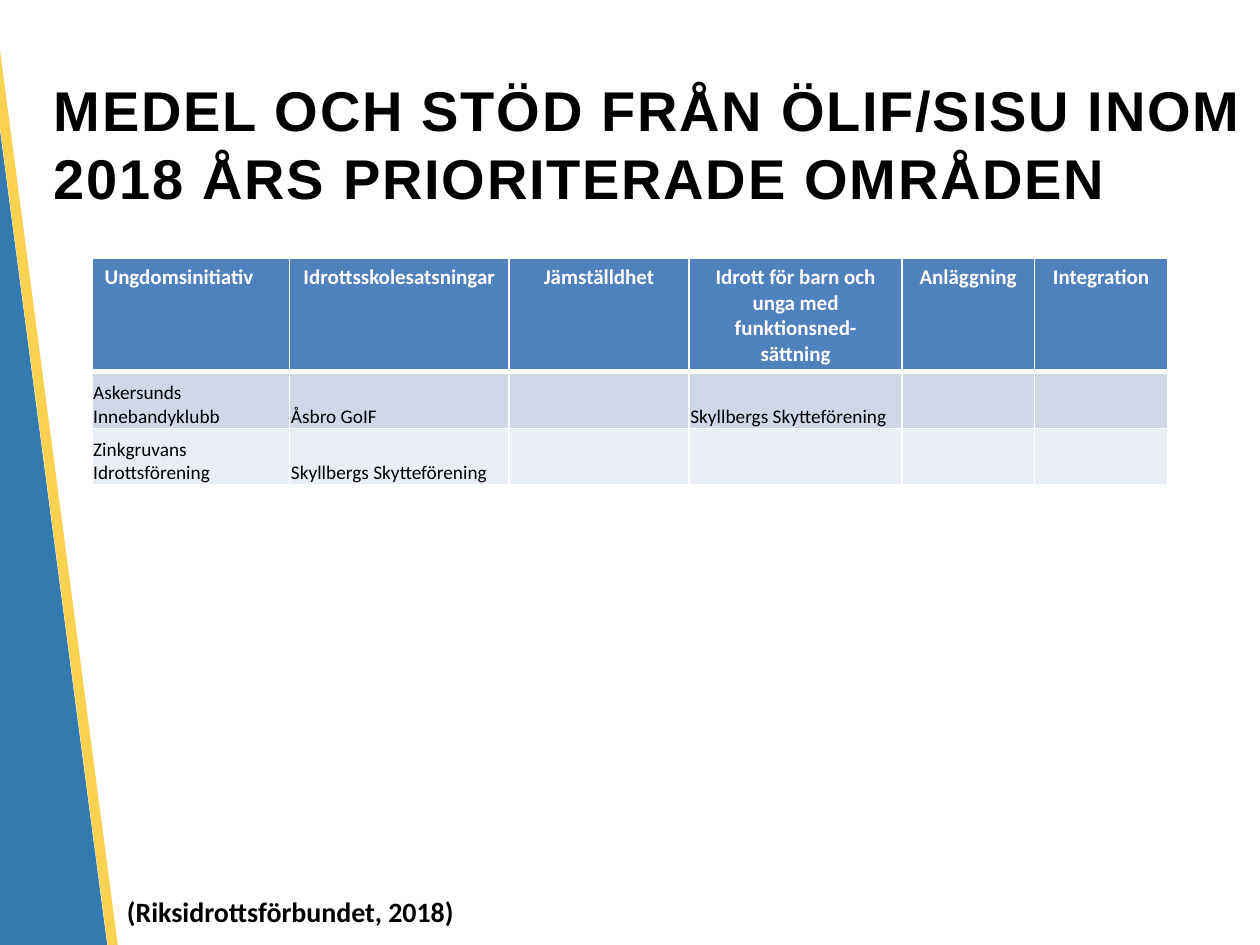
from lxml import etree
from pptx import Presentation
from pptx.dml.color import RGBColor
from pptx.enum import shapes, text
from pptx.oxml.ns import qn
from pptx.util import Inches, Pt

COLORS = {"blue": "005B9C", "gold": "FAC828", "head": "4F81BD", "odd": "D0D8E8",
          "even": "E9EDF4", "white": "FFFFFF", "black": "000000"}
TITLE = "MEDEL OCH STÖD FRÅN ÖLIF/SISU INOM 2018 ÅRS PRIORITERADE OMRÅDEN"
SOURCE = "(Riksidrottsförbundet, 2018)"
BARS = [("blue", 80, (-0.52, -1.64, 0.91, 11.33)),
        ("gold", 81, (0.38, -1.77, 0.08, 11.32))]
ROWS = [
    ["Ungdomsinitiativ", "Idrottsskolesatsningar", "Jämställdhet",
     "Idrott för barn och unga med funktionsned-sättning", "Anläggning", "Integration"],
    ["Askersunds Innebandyklubb", "Åsbro GoIF", "", "Skyllbergs Skytteförening", "", ""],
    ["Zinkgruvans Idrottsförening", "Skyllbergs Skytteförening", "", "", "", ""],
]
WIDTHS = [1.57, 1.74, 1.43, 1.69, 1.05, 1.06]
HEIGHTS = [0.9, 0.45, 0.45]
FILLS = ["head", "odd", "even"]


def rgb(name):
    return RGBColor.from_string(COLORS[name])


def style(para, size, color, bold, face="Calibri"):
    font = para.font
    font.size, font.bold, font.name = Pt(size), bold, face
    font.color.rgb = rgb(color)


def add_bar(slide, color, alpha, box):
    bar = slide.shapes.add_shape(shapes.MSO_SHAPE.RECTANGLE, *map(Inches, box))
    bar.rotation = 352.5
    bar.shadow.inherit = False
    bar.line.fill.background()
    bar.fill.solid()
    bar.fill.fore_color.rgb = rgb(color)
    tint = bar._element.spPr.find(qn("a:solidFill"))[0]
    etree.SubElement(tint, qn("a:alpha"), val=str(alpha * 1000))


def add_text(slide, words, box, size, face, wrap):
    frame = slide.shapes.add_textbox(*map(Inches, box)).text_frame
    frame.word_wrap = wrap
    para = frame.paragraphs[0]
    para.text = words
    style(para, size, "black", True, face)
    return frame


def edge(cell, low):
    """Draw white cell borders, with the bottom one low points wide."""
    props = cell._tc.get_or_add_tcPr()
    for i, (side, width) in enumerate([("L", 1), ("R", 1), ("T", 1), ("B", low)]):
        line = etree.Element(qn("a:ln" + side), w=str(Pt(width)))
        fill = etree.SubElement(line, qn("a:solidFill"))
        etree.SubElement(fill, qn("a:srgbClr"), val=COLORS["white"])
        props.insert(i, line)


def fill_cell(cell, words, row, col):
    head = row == 0
    cell.fill.solid()
    cell.fill.fore_color.rgb = rgb(FILLS[row])
    edge(cell, 3 if head else 1)
    para = cell.text_frame.paragraphs[0]
    para.text = words
    style(para, 12 if head else 11, "white" if head else "black", head)
    if head and col:
        para.alignment = text.PP_ALIGN.CENTER
    if not head:
        cell.vertical_anchor = text.MSO_ANCHOR.BOTTOM
        cell.margin_left = cell.margin_top = cell.margin_right = Inches(0.01)
        cell.margin_bottom = 0


def add_grid(slide):
    grid = slide.shapes.add_table(len(ROWS), len(WIDTHS), Inches(0.73), Inches(2.05),
                                  Inches(sum(WIDTHS)), Inches(sum(HEIGHTS))).table
    for col, width in zip(grid.columns, WIDTHS):
        col.width = Inches(width)
    for r, (words, height) in enumerate(zip(ROWS, HEIGHTS)):
        grid.rows[r].height = Inches(height)
        for c, word in enumerate(words):
            fill_cell(grid.cell(r, c), word, r, c)


def main():
    deck = Presentation()
    deck.slide_width, deck.slide_height = Inches(10), Inches(7.5)
    slide = deck.slides.add_slide(deck.slide_layouts[6])
    for bar in BARS:
        add_bar(slide, *bar)
    title = add_text(slide, TITLE, (0.33, 0.51, 9.67, 1.25), 32, "Arial", True)
    title.vertical_anchor = text.MSO_ANCHOR.MIDDLE
    title.paragraphs[0].runs[0]._r.get_or_add_rPr().set("spc", "100")
    source = add_text(slide, SOURCE, (0.91, 7.05, 2.84, 0.37), 16, "Calibri", False)
    source.auto_size = text.MSO_AUTO_SIZE.SHAPE_TO_FIT_TEXT
    add_grid(slide)
    deck.save("out.pptx")


if __name__ == "__main__":
    main()
